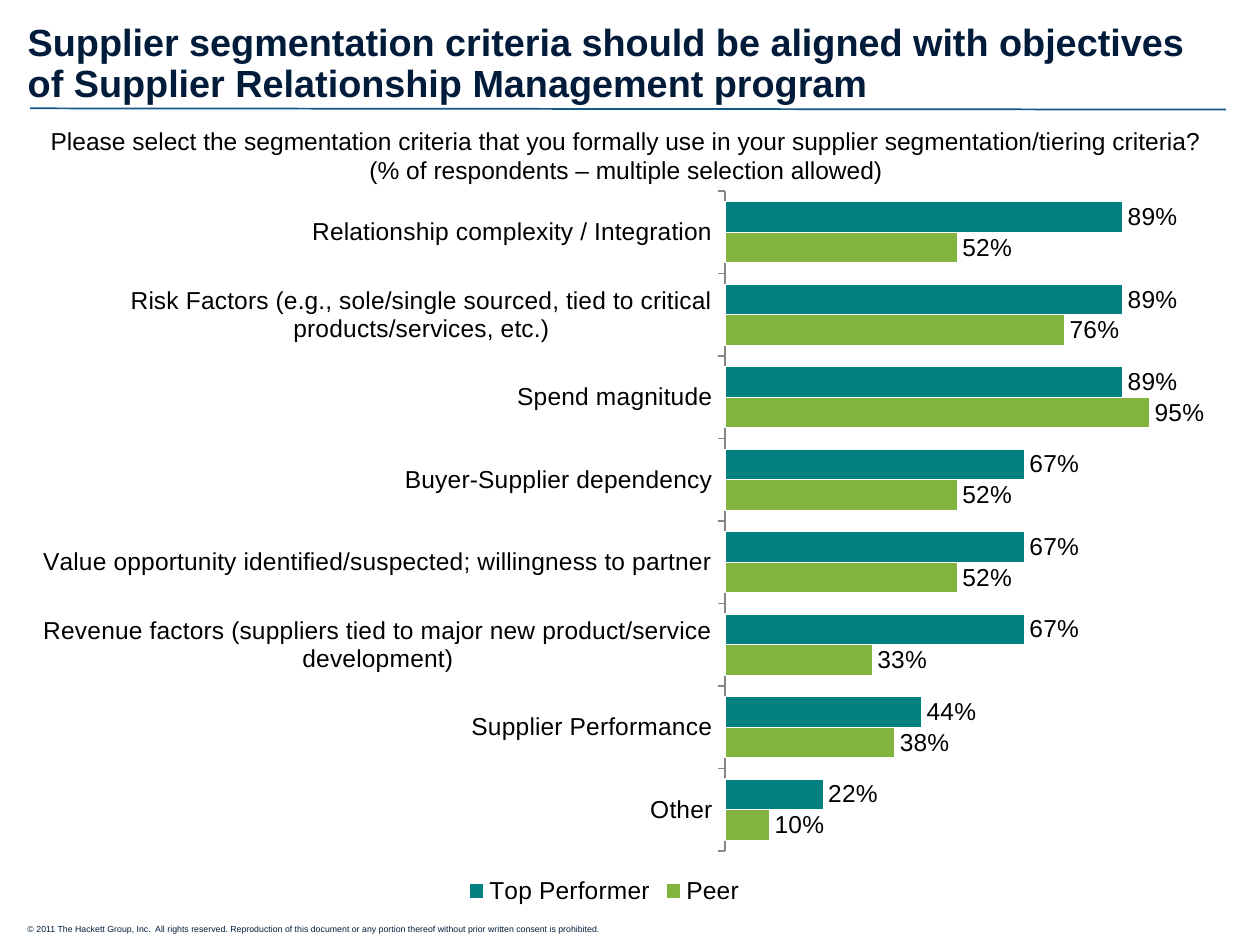
from dataclasses import dataclass

from lxml import etree
from pptx import Presentation
from pptx.chart.data import CategoryChartData
from pptx.dml.color import RGBColor
from pptx.enum.chart import XL_CHART_TYPE, XL_LABEL_POSITION, XL_LEGEND_POSITION, XL_TICK_MARK
from pptx.enum.shapes import MSO_CONNECTOR
from pptx.enum.text import MSO_ANCHOR, PP_ALIGN
from pptx.oxml.ns import qn
from pptx.util import Inches, Pt

BAR = XL_CHART_TYPE.BAR_CLUSTERED
OUTSIDE_END = XL_LABEL_POSITION.OUTSIDE_END
LEGEND_BOTTOM = XL_LEGEND_POSITION.BOTTOM
TICK_OUT, TICK_NONE = XL_TICK_MARK.OUTSIDE, XL_TICK_MARK.NONE
STRAIGHT = MSO_CONNECTOR.STRAIGHT
TOP, BOTTOM = MSO_ANCHOR.TOP, MSO_ANCHOR.BOTTOM
LEFT, CENTER = PP_ALIGN.LEFT, PP_ALIGN.CENTER


@dataclass(frozen=True)
class Theme:
    """Colours, font and type sizes of the slide."""
    font: str = "Arial"
    navy: str = "001C3A"
    rule: str = "135789"
    black: str = "000000"
    white: str = "FFFFFF"
    axis: str = "868686"
    peer: str = "84B440"
    top: str = "008080"
    title_size: float = 21.6
    body_size: float = 14
    small_size: float = 5


THEME = Theme()
TITLE = ("Supplier segmentation criteria should be aligned with objectives "
         "of Supplier Relationship Management program")
QUESTION = [
    "Please select the segmentation criteria that you formally use in your "
    "supplier segmentation/tiering criteria?",
    "(% of respondents – multiple selection allowed)",
]
COPYRIGHT = ("© 2011 The Hackett Group, Inc.  All rights reserved. Reproduction of this document "
             "or any portion thereof without prior written consent is prohibited.")
CRITERIA = [
    ("Other", 0.10, 0.22),
    ("Supplier Performance", 0.38, 0.44),
    ("Revenue factors (suppliers tied to major new product/service development)", 0.33, 0.67),
    ("Value opportunity identified/suspected; willingness to partner", 0.52, 0.67),
    ("Buyer-Supplier dependency", 0.52, 0.67),
    ("Spend magnitude", 0.95, 0.89),
    ("Risk Factors (e.g., sole/single sourced, tied to critical products/services, etc.)",
     0.76, 0.89),
    ("Relationship complexity / Integration", 0.52, 0.89),
]


def set_values(target, values):
    """Set each named attribute of the target."""
    for name, value in values.items():
        setattr(target, name, value)


def set_font(font, size, color, bold=False):
    """Apply the theme font with a size, colour and weight."""
    set_values(font, {"name": THEME.font, "size": Pt(size), "bold": bold})
    font.color.rgb = RGBColor.from_string(color)


def set_line(line, color, width):
    """Give a line its colour and width."""
    line.color.rgb = RGBColor.from_string(color)
    line.width = Pt(width)


def add_text(page, box, lines, size, color, bold=False, frame_format=None, para_format=None):
    """Place a wrapped text box with one paragraph for each line."""
    frame = page.shapes.add_textbox(*map(Inches, box)).text_frame
    set_values(frame, {"word_wrap": True, "vertical_anchor": TOP, **(frame_format or {})})
    for index, line in enumerate(lines):
        para = frame.add_paragraph() if index else frame.paragraphs[0]
        set_values(para, {"alignment": LEFT, **(para_format or {})})
        span = para.add_run()
        span.text = line
        set_font(span.font, size, color, bold)


def add_heading(page, box):
    """Place the title and the rule beneath it."""
    left, top, width, height = box
    insets = {"margin_left": Inches(0.08), "margin_right": Inches(0.08),
              "margin_top": Inches(0.04), "margin_bottom": Inches(0.04)}
    add_text(page, box, [TITLE], THEME.title_size, THEME.navy, True,
             {"vertical_anchor": BOTTOM, **insets}, {"line_spacing": 0.9})
    bottom = top + height
    rule = page.shapes.add_connector(
        STRAIGHT, Inches(left + 0.1), Inches(bottom - 0.02),
        Inches(left + width - 0.1), Inches(bottom - 0.01))
    set_line(rule.line, THEME.rule, 1)
    etree.SubElement(rule._element.spPr, qn("a:effectLst"))


def place_plot(chart, fractions):
    """Fix the inner plot area at fractions of the chart box."""
    plot_area = chart._chartSpace.chart.plotArea
    for old in plot_area.findall(qn("c:layout")):
        plot_area.remove(old)
    layout = etree.Element(qn("c:layout"))
    manual = etree.SubElement(layout, qn("c:manualLayout"))
    settings = {"layoutTarget": "inner", "xMode": "edge", "yMode": "edge", **fractions}
    for name, value in settings.items():
        etree.SubElement(manual, qn(f"c:{name}")).set("val", str(value))
    plot_area.insert(0, layout)


def add_criteria_chart(page, box):
    """Place the bar chart of segmentation criteria."""
    names, peer, top = zip(*CRITERIA)
    data = CategoryChartData(number_format="0%")
    data.categories = names
    data.add_series("Peer", peer)
    data.add_series("Top Performer", top)
    chart = page.shapes.add_chart(BAR, *map(Inches, box), data).chart
    set_values(chart, {"has_title": False, "has_legend": True})
    set_font(chart.font, THEME.body_size, THEME.black)
    set_values(chart.legend, {"position": LEGEND_BOTTOM, "include_in_layout": False})
    set_font(chart.legend.font, THEME.body_size, THEME.black)
    place_plot(chart, {"x": 0.6, "y": 0.02, "w": 0.37, "h": 0.9})

    set_values(chart.value_axis, {"visible": False, "has_major_gridlines": False,
                                  "minimum_scale": 0, "maximum_scale": 1})
    axis = chart.category_axis
    set_values(axis, {"major_tick_mark": TICK_OUT, "minor_tick_mark": TICK_NONE})
    set_line(axis.format.line, THEME.axis, 0.75)
    set_font(axis.tick_labels.font, THEME.body_size, THEME.black)

    plot = chart.plots[0]
    set_values(plot, {"gap_width": 70, "overlap": 0, "vary_by_categories": False})
    for series, color in zip(plot.series, (THEME.peer, THEME.top)):
        series.format.fill.solid()
        series.format.fill.fore_color.rgb = RGBColor.from_string(color)
        set_line(series.format.line, THEME.white, 0.75)
        labels = series.data_labels
        set_values(labels, {"show_value": True, "position": OUTSIDE_END,
                            "number_format": "0%", "number_format_is_linked": False})
        set_font(labels.font, THEME.body_size, THEME.black)


def main():
    """Build and save the slide."""
    deck = Presentation()
    set_values(deck, {"slide_width": Inches(10), "slide_height": Inches(7.5)})
    page = deck.slides.add_slide(deck.slide_layouts[6])
    add_text(page, (0.12, 7.28, 6.14, 0.18), [COPYRIGHT], THEME.small_size, THEME.navy)
    add_heading(page, (0.14, 0.31, 9.69, 0.57))
    add_criteria_chart(page, (0, 1.4, 9.59, 5.82))
    add_text(page, (0.23, 0.95, 9.48, 0.57), QUESTION, THEME.body_size, THEME.black,
             para_format={"alignment": CENTER})
    deck.save("out.pptx")


if __name__ == "__main__":
    main()
